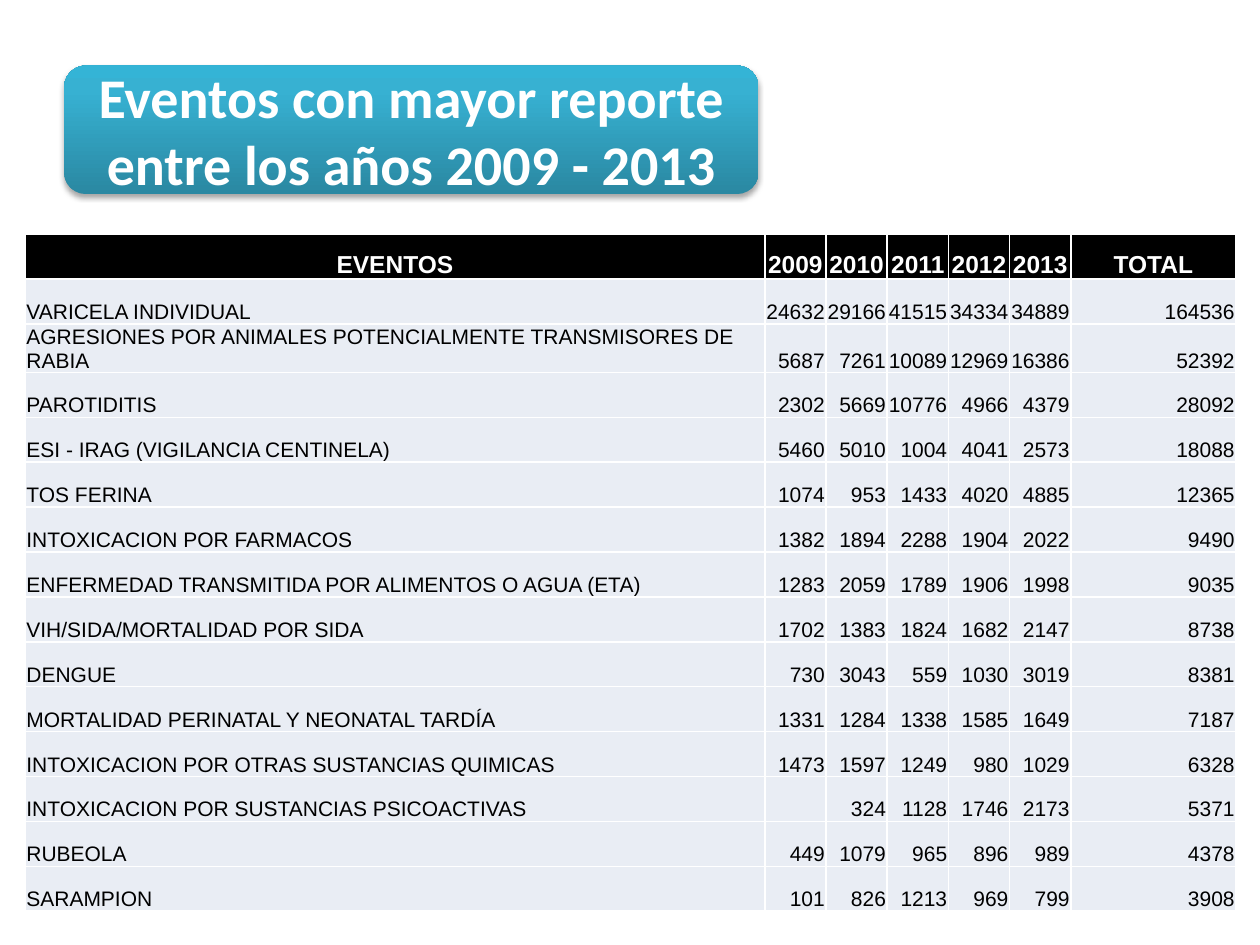
from lxml import etree
from pptx import Presentation
from pptx import util as u
from pptx.dml.color import RGBColor
from pptx.enum import shapes, text
from pptx.oxml import ns

YEARS = ["2009", "2010", "2011", "2012", "2013"]
EVENTS = [
    ("VARICELA INDIVIDUAL", 24632, 29166, 41515, 34334, 34889, 164536),
    ("AGRESIONES POR ANIMALES POTENCIALMENTE TRANSMISORES DE RABIA",
     5687, 7261, 10089, 12969, 16386, 52392),
    ("PAROTIDITIS", 2302, 5669, 10776, 4966, 4379, 28092),
    ("ESI - IRAG (VIGILANCIA CENTINELA)", 5460, 5010, 1004, 4041, 2573, 18088),
    ("TOS FERINA", 1074, 953, 1433, 4020, 4885, 12365),
    ("INTOXICACION POR FARMACOS", 1382, 1894, 2288, 1904, 2022, 9490),
    ("ENFERMEDAD TRANSMITIDA POR ALIMENTOS O AGUA (ETA)",
     1283, 2059, 1789, 1906, 1998, 9035),
    ("VIH/SIDA/MORTALIDAD POR SIDA", 1702, 1383, 1824, 1682, 2147, 8738),
    ("DENGUE", 730, 3043, 559, 1030, 3019, 8381),
    ("MORTALIDAD PERINATAL Y NEONATAL TARDÍA", 1331, 1284, 1338, 1585, 1649, 7187),
    ("INTOXICACION POR OTRAS SUSTANCIAS QUIMICAS", 1473, 1597, 1249, 980, 1029, 6328),
    ("INTOXICACION POR SUSTANCIAS PSICOACTIVAS", "", 324, 1128, 1746, 2173, 5371),
    ("RUBEOLA", 449, 1079, 965, 896, 989, 4378),
    ("SARAMPION", 101, 826, 1213, 969, 799, 3908),
]


def color(code):
    return RGBColor.from_string(code)


def child(parent, tag, **attrs):
    node = etree.SubElement(parent, ns.qn(tag))
    for key, value in attrs.items():
        node.set(key, str(value))
    return node


class Deck:
    white, black, pale = "FFFFFF", "000000", "E9EDF4"
    stops = [(0, "2A88A2"), (80, "37B1D2"), (100, "34B4D6")]
    center, left, right = (text.PP_ALIGN.CENTER, text.PP_ALIGN.LEFT,
                           text.PP_ALIGN.RIGHT)

    def __init__(self, wide, high):
        self.deck = Presentation()
        self.deck.slide_width = u.Inches(wide)
        self.deck.slide_height = u.Inches(high)
        self.slide = self.deck.slides.add_slide(self.deck.slide_layouts[5])

    def label(self, frame, words, align, face, size, tone, bold=False):
        frame.text = words
        par = frame.paragraphs[0]
        par.alignment = align
        for run in par.runs:
            run.font.name = face
            run.font.size = u.Pt(size)
            run.font.bold = bold
            run.font.color.rgb = color(tone)

    def panel(self, box):
        """Rounded panel with a vertical gradient and a soft shadow."""
        shape = self.slide.shapes.add_shape(
            shapes.MSO_SHAPE.ROUNDED_RECTANGLE, *map(u.Inches, box))
        shape.line.fill.background()
        shape.fill.gradient()
        shape.fill.gradient_angle = 90
        stops = shape._element.spPr.find(".//" + ns.qn("a:gsLst"))
        for old in list(stops):
            stops.remove(old)
        for place, tone in self.stops:
            stop = child(stops, "a:gs", pos=place * 1000)
            child(stop, "a:srgbClr", val=tone)
        shape.shadow.inherit = False
        effects = shape._element.spPr.find(ns.qn("a:effectLst"))
        shadow = child(effects, "a:outerShdw", blurRad=u.Pt(3.1),
                       dist=u.Pt(1.8), dir=5400000, rotWithShape=0)
        tone = child(shadow, "a:srgbClr", val=self.black)
        child(tone, "a:alpha", val=35000)

    def title(self, words, box):
        self.panel(box)
        title = self.slide.shapes.title
        title.left, title.top, title.width, title.height = map(u.Inches, box)
        # Bring the title in front of its panel
        self.slide.shapes._spTree.append(title._element)
        frame = title.text_frame
        frame.word_wrap = True
        frame.auto_size = text.MSO_AUTO_SIZE.NONE
        frame.vertical_anchor = text.MSO_ANCHOR.MIDDLE
        self.label(frame, words, self.center, "Calibri", 32, self.white, True)

    def border(self, cell):
        props = cell._tc.get_or_add_tcPr()
        for side in ("L", "R", "T", "B"):
            line = child(props, "a:ln" + side, w=u.Pt(1))
            child(child(line, "a:solidFill"), "a:srgbClr", val=self.white)

    def cell(self, cell, words, align, head):
        cell.margin_left = cell.margin_right = cell.margin_top = u.Inches(0.01)
        cell.margin_bottom = 0
        cell.vertical_anchor = text.MSO_ANCHOR.BOTTOM
        self.border(cell)
        cell.fill.solid()
        cell.fill.fore_color.rgb = color(self.black if head else self.pale)
        self.label(cell.text_frame, words, align, "Arial", 14 if head else 12,
                   self.white if head else self.black, head)

    def table(self, rows, box, widths):
        table = self.slide.shapes.add_table(
            len(rows), len(widths), *map(u.Inches, box)).table
        for col, width in zip(table.columns, widths):
            col.width = u.Inches(width)
        for r, row in enumerate(rows):
            table.rows[r].height = u.Inches(box[3] / len(rows))
            for c, value in enumerate(row):
                align = self.center if r == 0 else self.right if c else self.left
                self.cell(table.cell(r, c), str(value), align, r == 0)


def main():
    page = Deck(10, 7.5)
    page.title("Eventos con mayor reporte entre los años 2009 - 2013",
               (0.51, 0.52, 5.51, 1.02))
    wide, name, total = 9.61, 5.87, 1.31
    year = (wide - name - total) / len(YEARS)
    page.table([("EVENTOS", *YEARS, "TOTAL")] + EVENTS,
               (0.2, 1.86, wide, 5.35), [name] + [year] * len(YEARS) + [total])
    page.deck.save("out.pptx")


if __name__ == "__main__":
    main()
